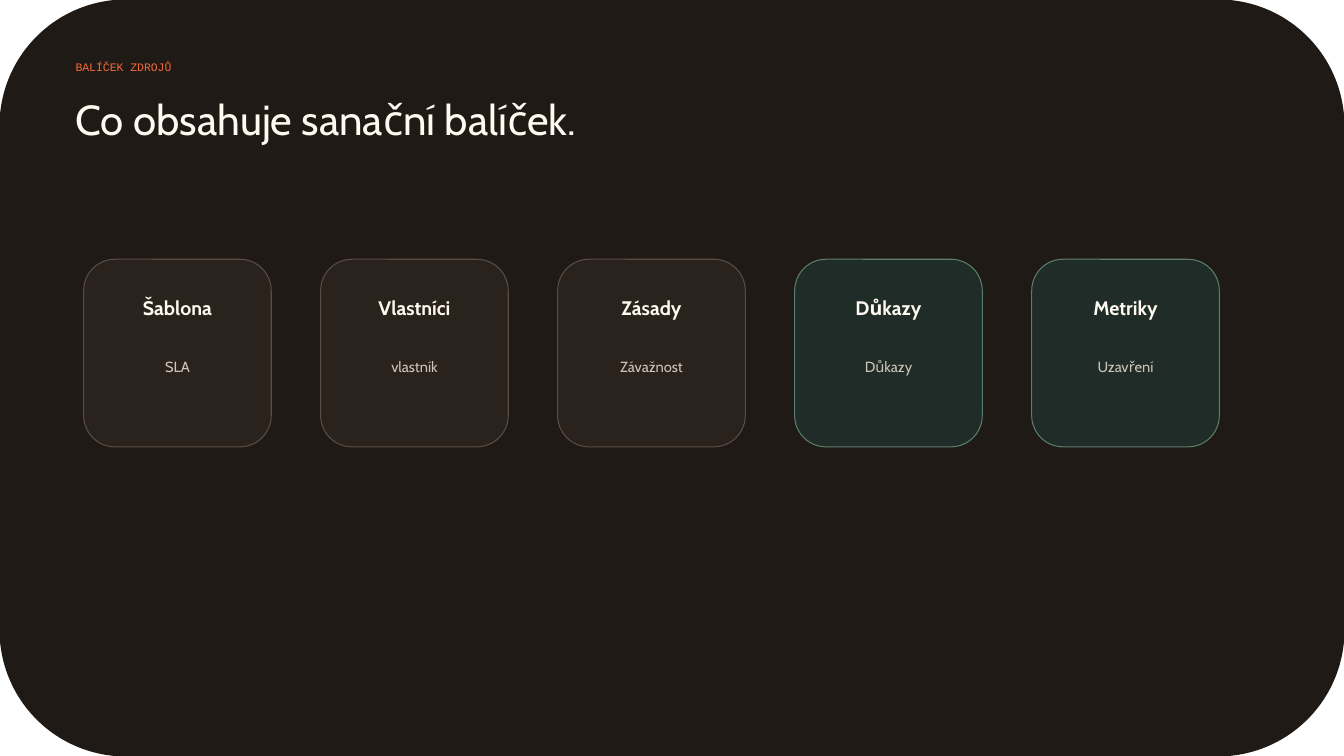
from pptx import Presentation
from pptx import util as u
from pptx.dml.color import RGBColor
from pptx.enum import shapes, text

WIDTH, HEIGHT = 960, 540
PANEL = ("201A16", "201A16", 0)
BROWN = ("2A221D", "5B4D44", 0.75)
GREEN = ("1F2C27", "5C7E6B", 0.75)
KICKER = {"name": "Courier New", "size": 8.2, "color": "F26B3A"}
TITLE = {"name": "Cabin", "size": 30, "color": "FFF9EF"}
CARD_HEAD = {"name": "Cabin", "size": 14, "color": "FFF9EF", "bold": True}
CARD_NOTE = {"name": "Cabin", "size": 10.5, "color": "CFC4B8"}

HEADINGS = [
    ("BALÍČEK ZDROJŮ", (54, 43.2, 330, 20), KICKER),
    ("Co obsahuje sanační balíček.", (54, 67, 598, 51), TITLE),
]
CARDS = [
    ("Šablona", "SLA", BROWN),
    ("Vlastníci", "vlastník", BROWN),
    ("Zásady", "Závažnost", BROWN),
    ("Důkazy", "Důkazy", GREEN),
    ("Metriky", "Uzavření", GREEN),
]
CARD_LEFT, CARD_TOP, CARD_SIZE, CARD_PITCH = 59.75, 185.2, 134, 169.3
HEAD_TOP, HEAD_WIDTH, HEAD_HEIGHT = 211, 107, 24
NOTE_TOP, NOTE_WIDTH, NOTE_HEIGHT = 255.6, 112, 41


def rgb(value):
    return RGBColor.from_string(value)


def add_panel(box, style):
    fill, line, width = style
    sp = slide.shapes.add_shape(
        shapes.MSO_SHAPE.ROUNDED_RECTANGLE, *map(u.Pt, box))
    sp.shadow.inherit = False
    sp.fill.solid()
    sp.fill.fore_color.rgb = rgb(fill)
    sp.line.color.rgb = rgb(line)
    sp.line.width = u.Pt(width)


def add_text(words, box, style, align=text.PP_ALIGN.LEFT):
    tf = slide.shapes.add_textbox(*map(u.Pt, box)).text_frame
    frame = {"word_wrap": True, "margin_left": 0, "margin_top": 0,
             "margin_right": 0, "margin_bottom": 0}
    for key, value in frame.items():
        setattr(tf, key, value)
    p = tf.paragraphs[0]
    p.alignment = align
    r = p.add_run()
    r.text = words
    for key, value in style.items():
        if key == "color":
            r.font.color.rgb = rgb(value)
        else:
            setattr(r.font, key, u.Pt(value) if key == "size" else value)


prs = Presentation()
prs.slide_width, prs.slide_height = u.Pt(WIDTH), u.Pt(HEIGHT)
slide = prs.slides.add_slide(prs.slide_layouts[6])

add_panel((0, 0, WIDTH, HEIGHT), PANEL)
for words, box, style in HEADINGS:
    add_text(words, box, style)

for i, (head, note, style) in enumerate(CARDS):
    left = CARD_LEFT + i * CARD_PITCH
    center = left + CARD_SIZE / 2
    add_panel((left, CARD_TOP, CARD_SIZE, CARD_SIZE), style)
    add_text(head, (center - HEAD_WIDTH / 2, HEAD_TOP, HEAD_WIDTH, HEAD_HEIGHT),
             CARD_HEAD, text.PP_ALIGN.CENTER)
    add_text(note, (center - NOTE_WIDTH / 2, NOTE_TOP, NOTE_WIDTH, NOTE_HEIGHT),
             CARD_NOTE, text.PP_ALIGN.CENTER)

prs.save("out.pptx")
